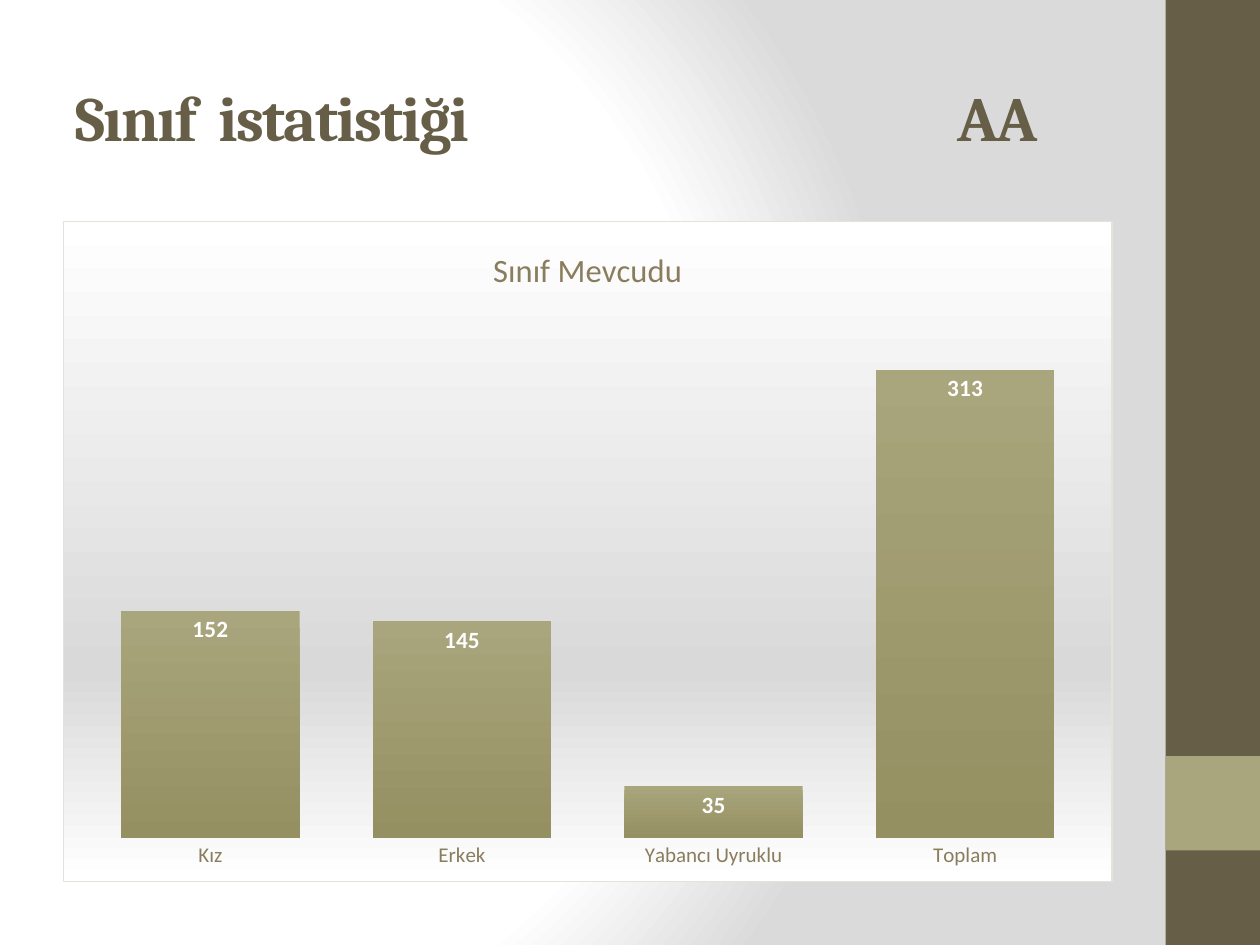
from lxml import etree
from pptx import Presentation
from pptx.chart.data import CategoryChartData
from pptx.dml.color import RGBColor
from pptx.enum.chart import XL_CHART_TYPE as ChartType
from pptx.enum.chart import XL_LABEL_POSITION as LabelPosition
from pptx.enum.chart import XL_TICK_MARK as TickMark
from pptx.enum.shapes import MSO_SHAPE as Shape
from pptx.enum.text import MSO_ANCHOR as Anchor
from pptx.oxml import parse_xml
from pptx.oxml.ns import nsdecls, qn
from pptx.util import Inches, Pt

COLORS = {
    "olive": "675E47",
    "sage": "A9A57C",
    "moss": "959062",
    "text": "2F2B20",
    "label": "897D5D",
    "border": "E5E2D9",
    "white": "FFFFFF",
    "mist": "DADADA",
    "silver": "D9D9D9",
}
DOWNWARD = '<a:lin ang="5400000" scaled="0"/>'
CIRCULAR = '<a:path path="circle"><a:fillToRect l="20000" t="50000" r="100000" b="50000"/></a:path>'
ENROLMENT = {"Kız": 152, "Erkek": 145, "Yabancı Uyruklu": 35, "Toplam": 313}


def rgb(name):
    return RGBColor.from_string(COLORS[name])


def gradient(stops, direction):
    marks = "".join(
        f'<a:gs pos="{percent * 1000}"><a:srgbClr val="{COLORS[name]}"/></a:gs>'
        for percent, name in stops
    )
    return parse_xml(
        f'<a:gradFill {nsdecls("a")} rotWithShape="1"><a:gsLst>{marks}</a:gsLst>{direction}</a:gradFill>'
    )


def swap_solid_fill(properties, fill):
    properties.replace(properties.find(qn("a:solidFill")), fill)


def style_font(font, size, color, bold=False, name="Calibri"):
    font.name, font.size, font.bold = name, Pt(size), bold
    font.color.rgb = rgb(color)


def paint_background(slide):
    slide.background.fill.solid()
    properties = slide.element.cSld.find(qn("p:bg")).find(qn("p:bgPr"))
    swap_solid_fill(
        properties, gradient([(0, "white"), (75, "white"), (100, "mist")], CIRCULAR)
    )


def add_band(slide, top, height, color):
    band = slide.shapes.add_shape(
        Shape.RECTANGLE, Inches(9.25), Inches(top), Inches(0.75), Inches(height)
    )
    band.shadow.inherit = False
    band.fill.solid()
    band.fill.fore_color.rgb = rgb(color)
    band.line.fill.background()


def add_heading(slide, topic, class_name):
    heading = slide.shapes.add_textbox(
        Inches(0.5), Inches(0.3), Inches(8.33), Inches(1.25)
    ).text_frame
    heading.word_wrap = True
    heading.vertical_anchor = Anchor.MIDDLE
    line = heading.paragraphs[0]
    line.text = f"{topic}\t{class_name}"
    style_font(line.font, 36, "olive", bold=True, name="Cambria")
    properties = line._p.get_or_add_pPr()
    properties.find(qn("a:defRPr")).set("spc", "-100")
    tabs = etree.Element(qn("a:tabLst"))
    etree.SubElement(tabs, qn("a:tab"), pos=str(Inches(7)), algn="l")
    properties.insert(0, tabs)


def frame_chart(chart):
    frame = parse_xml(
        f'<c:spPr {nsdecls("c", "a")}><a:ln w="{Pt(0.75)}"><a:solidFill>'
        f'<a:srgbClr val="{COLORS["border"]}"/></a:solidFill></a:ln></c:spPr>'
    )
    frame.insert(0, gradient([(0, "white"), (68, "silver"), (100, "white")], DOWNWARD))
    chart.element.find(qn("c:chart")).addnext(frame)


def style_axes(chart):
    categories, values = chart.category_axis, chart.value_axis
    categories.major_tick_mark = categories.minor_tick_mark = TickMark.NONE
    categories.format.line.fill.background()
    style_font(categories.tick_labels.font, 12, "label")
    values.has_major_gridlines = False
    values.minimum_scale, values.maximum_scale = 0, 350
    values.visible = False


def style_columns(plot):
    plot.gap_width = 41
    plot.vary_by_categories = False
    columns = plot.series[0]
    columns.format.fill.solid()
    swap_solid_fill(
        columns.format.fill._xPr, gradient([(0, "sage"), (100, "moss")], DOWNWARD)
    )
    labels = columns.data_labels
    labels.show_value = True
    labels.position = LabelPosition.INSIDE_END
    style_font(labels.font, 13.3, "white", bold=True)


def add_enrolment_chart(slide):
    enrolment = CategoryChartData()
    enrolment.categories = list(ENROLMENT)
    enrolment.add_series("Series 1", list(ENROLMENT.values()))
    chart = slide.shapes.add_chart(
        ChartType.COLUMN_CLUSTERED,
        Inches(0.5), Inches(1.75), Inches(8.33), Inches(5.25),
        enrolment,
    ).chart
    style_font(chart.font, 10, "text")
    chart.has_legend = False
    chart.has_title = True
    caption = chart.chart_title.text_frame
    caption.text = "Sınıf Mevcudu"
    style_font(caption.paragraphs[0].font, 18.6, "label")
    chart.chart_title.include_in_layout = False
    style_axes(chart)
    style_columns(chart.plots[0])
    frame_chart(chart)


def main():
    """Build the class statistics slide."""
    deck = Presentation()
    deck.slide_width, deck.slide_height = Inches(10), Inches(7.5)
    slide = deck.slides.add_slide(deck.slide_layouts[6])
    paint_background(slide)
    add_band(slide, 0, 7.5, "olive")
    add_band(slide, 6, 0.75, "sage")
    add_heading(slide, "Sınıf  istatistiği", "AA")
    add_enrolment_chart(slide)
    deck.save("out.pptx")


if __name__ == "__main__":
    main()
